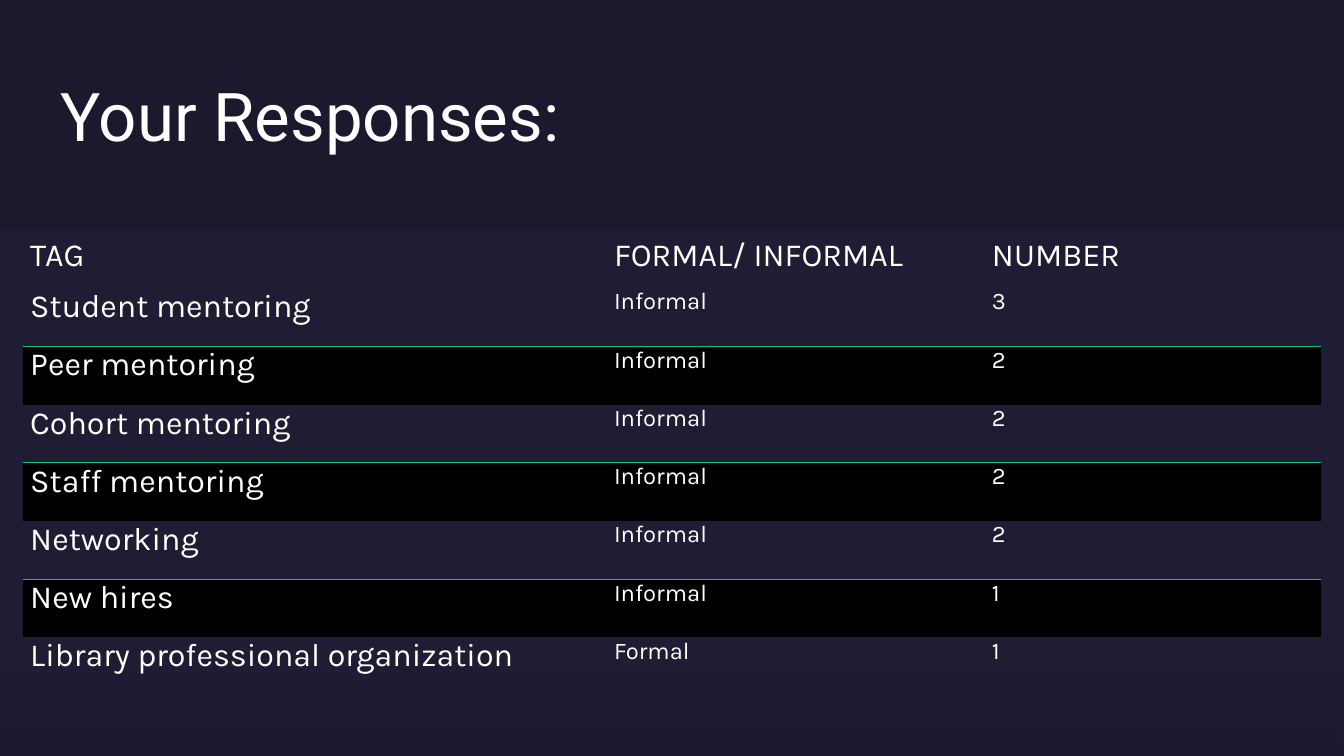
import dataclasses

import pptx
import pptx.dml.color
import pptx.enum.shapes
import pptx.enum.text
import pptx.oxml
import pptx.oxml.ns
import pptx.util

Pt = pptx.util.Pt
ANCHOR = pptx.enum.text.MSO_ANCHOR
NS = 'xmlns:a="http://schemas.openxmlformats.org/drawingml/2006/main"'
PLAIN = "{2D5ABB26-0587-4C30-8999-92F81FD0307C}"

NIGHT, LILAC, GREEN = "1B192E", "7771B2", "13BE89"
WHITE, BLACK = "FFFFFF", "000000"


@dataclasses.dataclass
class Stop:
    place: float
    color: str
    alpha: int


@dataclasses.dataclass
class Band:
    top: float
    height: float
    stops: list[Stop]


@dataclasses.dataclass
class Answer:
    tag: str
    kind: str
    count: int


BANDS = [
    Band(0, 540, [Stop(0, NIGHT, 100)]),
    Band(164.2, 375.8, [Stop(0, LILAC, 5)]),
    Band(454.3, 85.7, [Stop(0.28, NIGHT, 0), Stop(0.9, NIGHT, 60)]),
]
HEADS = ["TAG", "FORMAL/ INFORMAL", "NUMBER"]
ANSWERS = [
    Answer("Student mentoring", "Informal", 3),
    Answer("Peer mentoring", "Informal", 2),
    Answer("Cohort mentoring", "Informal", 2),
    Answer("Staff mentoring", "Informal", 2),
    Answer("Networking", "Informal", 2),
    Answer("New hires", "Informal", 1),
    Answer("Library professional organization", "Formal", 1),
]
WIDTHS = [417, 270, 240]
ROW = 41.6


def rgb(code: str) -> pptx.dml.color.RGBColor:
    return pptx.dml.color.RGBColor.from_string(code)


def write(frame, text: str, *, size: float, font: str = "Karla",
          color: str = WHITE) -> None:
    """Put one left-aligned, formatted run into a text frame."""
    line = frame.paragraphs[0]
    line.alignment = pptx.enum.text.PP_ALIGN.LEFT
    run = line.add_run()
    run.text = text
    run.font.size = Pt(size)
    run.font.name = font
    run.font.color.rgb = rgb(color)


def draw_band(slide, band: Band):
    """Draw a full-width band with a solid or fading fill."""
    shape = slide.shapes.add_shape(
        pptx.enum.shapes.MSO_SHAPE.RECTANGLE,
        Pt(0), Pt(band.top), Pt(960), Pt(band.height))
    shape.shadow.inherit = False
    shape.line.fill.background()
    if len(band.stops) == 1:
        shape.fill.solid()
        shape.fill.fore_color.rgb = rgb(band.stops[0].color)
    else:
        shape.fill.gradient()
        shape.fill.gradient_angle = 270
        for mark, stop in zip(shape.fill.gradient_stops, band.stops):
            mark.position = stop.place
            mark.color.rgb = rgb(stop.color)
    tints = shape.element.iter(pptx.oxml.ns.qn("a:srgbClr"))
    for tint, stop in zip(list(tints), band.stops):
        if stop.alpha < 100:
            tint.append(pptx.oxml.parse_xml(
                f'<a:alpha {NS} val="{stop.alpha * 1000}"/>'))
    return shape


def set_edges(cell, lines: str) -> None:
    """Draw green lines on the named sides and clear the others."""
    props = cell._tc.get_or_add_tcPr()
    for spot, side in enumerate("LRTB"):
        fill = "<a:noFill/>"
        if side in lines:
            fill = f'<a:solidFill><a:srgbClr val="{GREEN}"/></a:solidFill>'
        props.insert(spot, pptx.oxml.parse_xml(
            f'<a:ln{side} {NS} w="{int(Pt(1))}">{fill}</a:ln{side}>'))


def fill_cell(cell, text: str, size: float, row: int) -> None:
    """Format one cell by its row: header, plain or dark."""
    cell.margin_left = cell.margin_right = Pt(5.2)
    cell.margin_top, cell.margin_bottom = Pt(0), Pt(10)
    cell.vertical_anchor = ANCHOR.BOTTOM if row == 0 else ANCHOR.TOP
    write(cell.text_frame, text, size=size)
    dark = row > 0 and row % 2 == 0
    if dark:
        cell.fill.solid()
        cell.fill.fore_color.rgb = rgb(BLACK)
    else:
        cell.fill.background()
    above_dark = row % 2 == 1 and row < len(ANSWERS)
    set_edges(cell, "T" if dark else "B" if above_dark else "")


def draw_table(slide) -> None:
    count = len(ANSWERS) + 1
    frame = slide.shapes.add_table(
        count, len(HEADS), Pt(16.4), Pt(164.2),
        Pt(sum(WIDTHS)), Pt(ROW * count))
    table = frame.table
    table.horz_banding = table.first_row = False
    for style in frame.element.iter(pptx.oxml.ns.qn("a:tableStyleId")):
        style.text = PLAIN
    for column, width in zip(table.columns, WIDTHS):
        column.width = Pt(width)
    for row in table.rows:
        row.height = Pt(ROW)
    for col, head in enumerate(HEADS):
        fill_cell(table.cell(0, col), head, 23, 0)
    for row, answer in enumerate(ANSWERS, 1):
        texts = [answer.tag, answer.kind, str(answer.count)]
        for col, text in enumerate(texts):
            fill_cell(table.cell(row, col), text, 17 if col else 23, row)


def place_title(slide, text: str) -> None:
    title = slide.shapes.title
    title.left, title.top = Pt(43.2), Pt(43.2)
    title.width, title.height = Pt(502), Pt(77.8)
    frame = title.text_frame
    frame.margin_left = frame.margin_right = Pt(0)
    frame.margin_top = frame.margin_bottom = Pt(0)
    frame.vertical_anchor = ANCHOR.MIDDLE
    frame.auto_size = pptx.enum.text.MSO_AUTO_SIZE.NONE
    frame.word_wrap = True
    write(frame, text, size=48, font="Roboto")


def main() -> None:
    deck = pptx.Presentation()
    deck.slide_width, deck.slide_height = Pt(960), Pt(540)
    slide = deck.slides.add_slide(deck.slide_layouts[5])
    slide.background.fill.solid()
    slide.background.fill.fore_color.rgb = rgb(NIGHT)

    # Bands, with the title just above the backdrop
    backdrop, *_ = [draw_band(slide, band) for band in BANDS]
    place_title(slide, "Your Responses:")
    backdrop.element.addnext(slide.shapes.title.element)

    # Table of answers
    draw_table(slide)
    deck.save("out.pptx")


if __name__ == "__main__":
    main()
